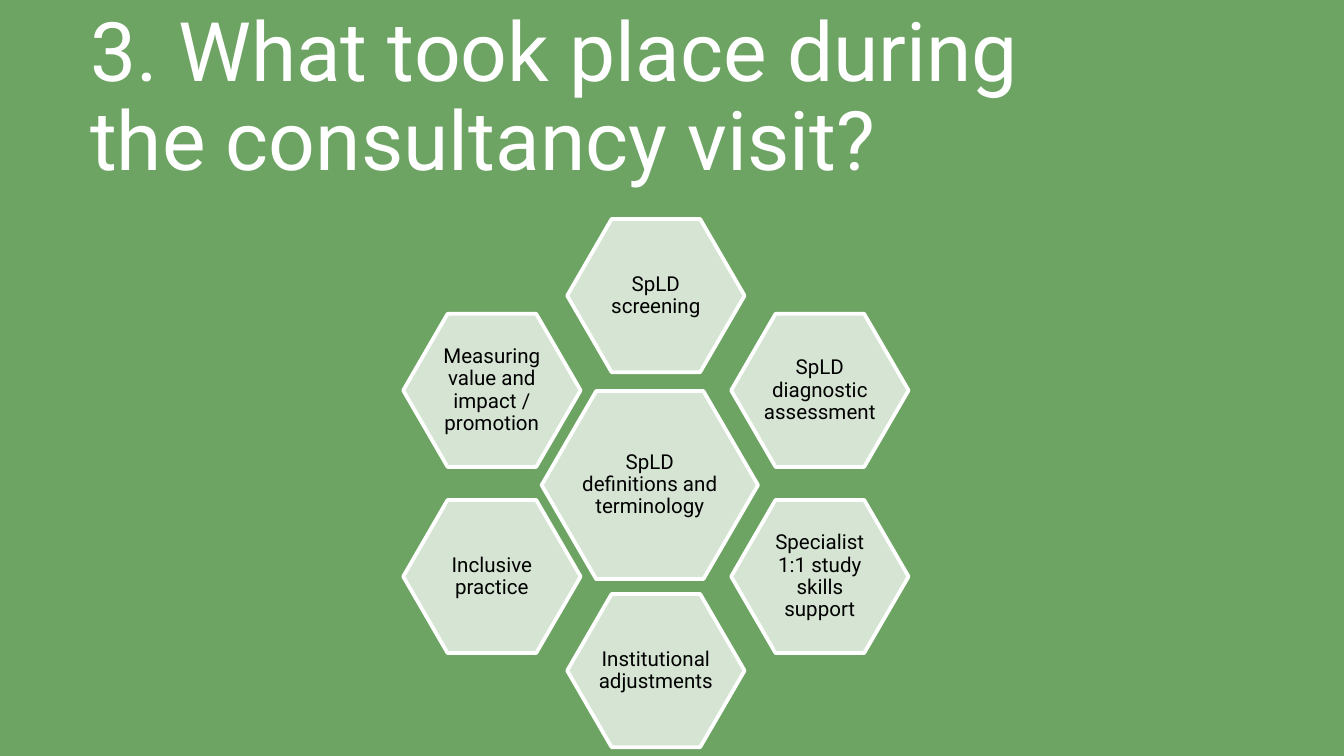
from dataclasses import dataclass

from pptx import Presentation
from pptx.dml.color import RGBColor
from pptx.enum.shapes import MSO_SHAPE
from pptx.enum.text import MSO_ANCHOR, PP_ALIGN
from pptx.util import Emu, Pt

EMU_PER_PX = 4572  # 200 px to the inch


@dataclass(frozen=True)
class Theme:
    background: RGBColor = RGBColor(0x6D, 0xA4, 0x63)
    tile: RGBColor = RGBColor(0xD6, 0xE5, 0xD3)
    white: RGBColor = RGBColor(0xFF, 0xFF, 0xFF)
    black: RGBColor = RGBColor(0, 0, 0)
    font: str = "Roboto"
    title_size: Pt = Pt(44)
    title_spacing: Pt = Pt(48)
    tile_size: Pt = Pt(11)
    tile_spacing: float = 0.9
    outline: Pt = Pt(2)


THEME = Theme()

TITLE = "3. What took place during the consultancy visit?"
CENTRE_LABEL = "SpLD definitions and terminology"
CENTRE_BOX = (806, 582, 322, 280)
TILE_WIDTH, TILE_HEIGHT = 264, 228
COLUMNS = [600 + 244 * i for i in range(3)]
ROWS = [326, 467, 744, 884]
# Label, column, row: clockwise from the top
RING = [
    ("SpLD screening", 1, 0),
    ("SpLD diagnostic assessment", 2, 1),
    ("Specialist 1:1 study skills support", 2, 2),
    ("Institutional adjustments", 1, 3),
    ("Inclusive practice", 0, 2),
    ("Measuring value and impact / promotion", 0, 1),
]


def px(n):
    return Emu(n * EMU_PER_PX)


def set_text(tf, text, size, color, spacing):
    """Fill a frame without insets, so the longest words fit on one line."""
    tf.word_wrap = True
    tf.margin_left = tf.margin_right = 0
    tf.margin_top = tf.margin_bottom = 0
    tf.text = text
    p = tf.paragraphs[0]
    p.line_spacing = spacing
    font = p.runs[0].font
    font.name, font.size, font.color.rgb = THEME.font, size, color
    return p


def add_title(s, text):
    box = s.shapes.add_textbox(px(134), px(12), px(1522), px(268))
    set_text(box.text_frame, text, THEME.title_size, THEME.white,
             THEME.title_spacing)


def add_hexagon(s, label, x, y, width, height):
    sp = s.shapes.add_shape(MSO_SHAPE.HEXAGON, px(x), px(y),
                            px(width), px(height))
    sp.adjustments[0] = 0.29
    sp.shadow.inherit = False
    sp.fill.solid()
    sp.fill.fore_color.rgb = THEME.tile
    sp.line.color.rgb = THEME.white
    sp.line.width = THEME.outline
    tf = sp.text_frame
    tf.vertical_anchor = MSO_ANCHOR.MIDDLE
    p = set_text(tf, label, THEME.tile_size, THEME.black,
                 THEME.tile_spacing)
    p.alignment = PP_ALIGN.CENTER


def main():
    prs = Presentation()
    prs.slide_width, prs.slide_height = px(2000), px(1125)
    s = prs.slides.add_slide(prs.slide_layouts[6])
    s.background.fill.solid()
    s.background.fill.fore_color.rgb = THEME.background

    add_title(s, TITLE)
    add_hexagon(s, CENTRE_LABEL, *CENTRE_BOX)
    for label, col, row in RING:
        add_hexagon(s, label, COLUMNS[col], ROWS[row],
                    TILE_WIDTH, TILE_HEIGHT)
    prs.save("out.pptx")


if __name__ == "__main__":
    main()
